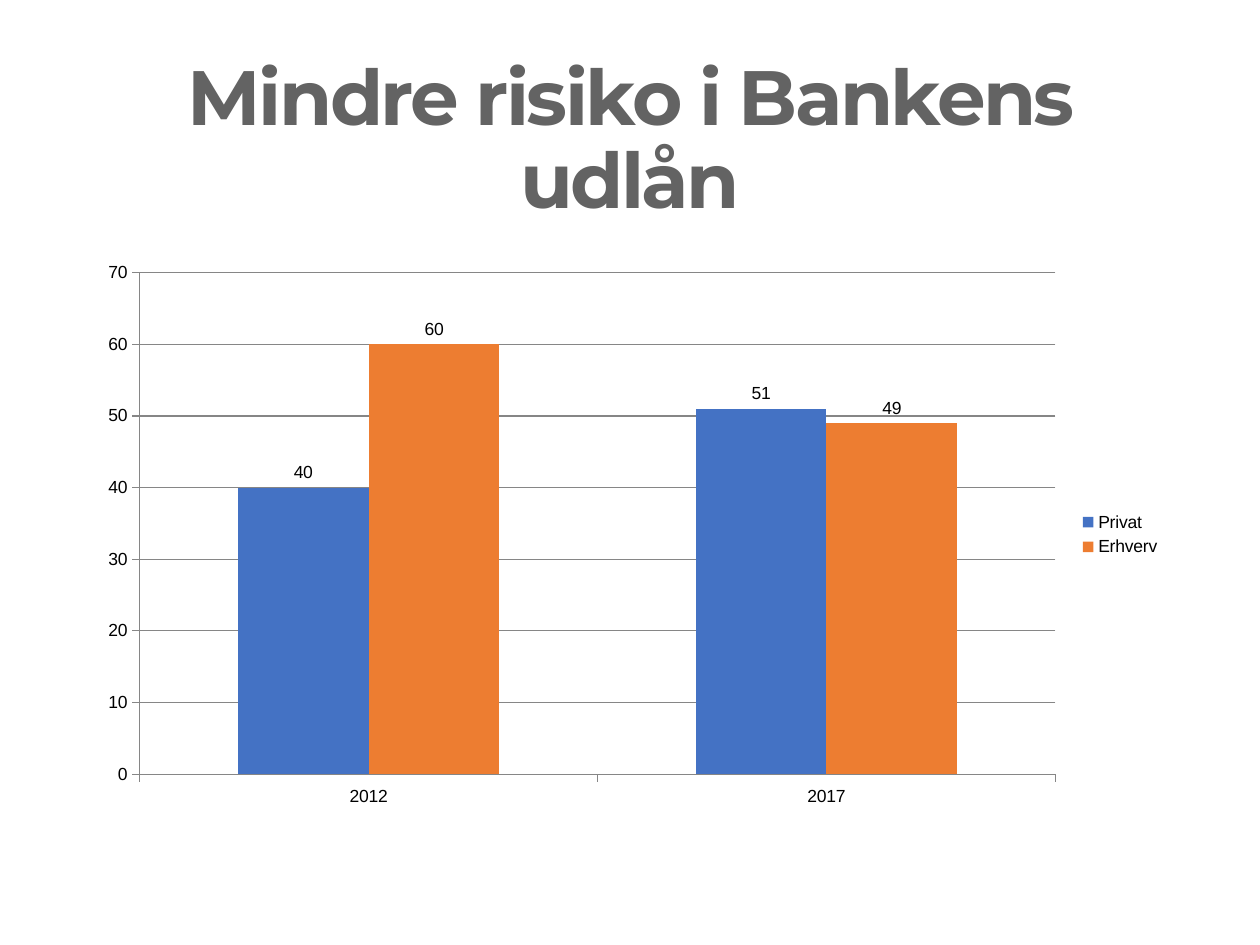
from pptx import Presentation
from pptx import util as u
from pptx.chart import data
from pptx.dml.color import RGBColor
from pptx.enum import chart as kinds, text

Pt = u.Pt


def tint(code):
    return RGBColor.from_string(code)


def put(item, vals):
    for name, val in vals.items():
        setattr(item, name, val)


class Deck:
    """Holds the style and the current slide, and draws each kind of element."""

    head = {"name": "Montserrat", "size": Pt(44), "bold": True}
    body = {"name": "Arial", "size": Pt(10)}
    ink, dark, grey = "000000", "636363", "868686"

    def __init__(self, wide, high):
        self.show = Presentation()
        put(self.show, {"slide_width": Pt(wide), "slide_height": Pt(high)})
        self.slide = self.show.slides.add_slide(self.show.slide_layouts[6])

    def title(self, words, *box):
        frame = self.slide.shapes.add_textbox(*map(Pt, box)).text_frame
        put(frame, {"word_wrap": True, "auto_size": text.MSO_AUTO_SIZE.NONE,
                    "vertical_anchor": text.MSO_ANCHOR.MIDDLE})
        para = frame.paragraphs[0]
        put(para, {"alignment": text.PP_ALIGN.CENTER, "line_spacing": 0.9})
        run = para.add_run()
        run.text = words
        put(run.font, self.head)
        run.font.color.rgb = tint(self.dark)
        run.font._element.set("spc", "-150")

    def line(self, form):
        form.line.width = Pt(0.75)
        form.line.color.rgb = tint(self.grey)

    def bars(self, cats, rows, *box):
        feed = data.CategoryChartData(number_format="General")
        feed.categories = cats
        for name, vals, _ in rows:
            feed.add_series(name, vals)
        chart = self.slide.shapes.add_chart(
            kinds.XL_CHART_TYPE.COLUMN_CLUSTERED, *map(Pt, box), feed).chart
        put(chart, {"has_title": False, "has_legend": True})
        put(chart.font, self.body)
        chart.font.color.rgb = tint(self.ink)
        put(chart.legend, {"position": kinds.XL_LEGEND_POSITION.RIGHT,
                           "include_in_layout": False})
        for axis in (chart.category_axis, chart.value_axis):
            put(axis, {"major_tick_mark": kinds.XL_TICK_MARK.OUTSIDE,
                       "minor_tick_mark": kinds.XL_TICK_MARK.NONE})
            self.line(axis.format)
        put(chart.value_axis, {"minimum_scale": 0, "maximum_scale": 70,
                               "major_unit": 10, "has_major_gridlines": True})
        self.line(chart.value_axis.major_gridlines.format)
        plot = chart.plots[0]
        put(plot, {"gap_width": 150, "overlap": 0, "vary_by_categories": False})
        for bar, (_, _, code) in zip(plot.series, rows):
            bar.format.fill.solid()
            bar.format.fill.fore_color.rgb = tint(code)
            put(bar.data_labels, {"show_value": True,
                                  "position": kinds.XL_LABEL_POSITION.OUTSIDE_END})


def main():
    deck = Deck(720, 540)
    left, wide = 49.5, 621
    deck.title("Mindre risiko i Bankens udlån", left, 28.75, wide, 104.4)
    rows = [("Privat", (40, 51), "4472C4"), ("Erhverv", (60, 49), "ED7D31")]
    deck.bars(["2012", "2017"], rows, left, 143.75, wide, 323.5)
    deck.show.save("out.pptx")


if __name__ == "__main__":
    main()
